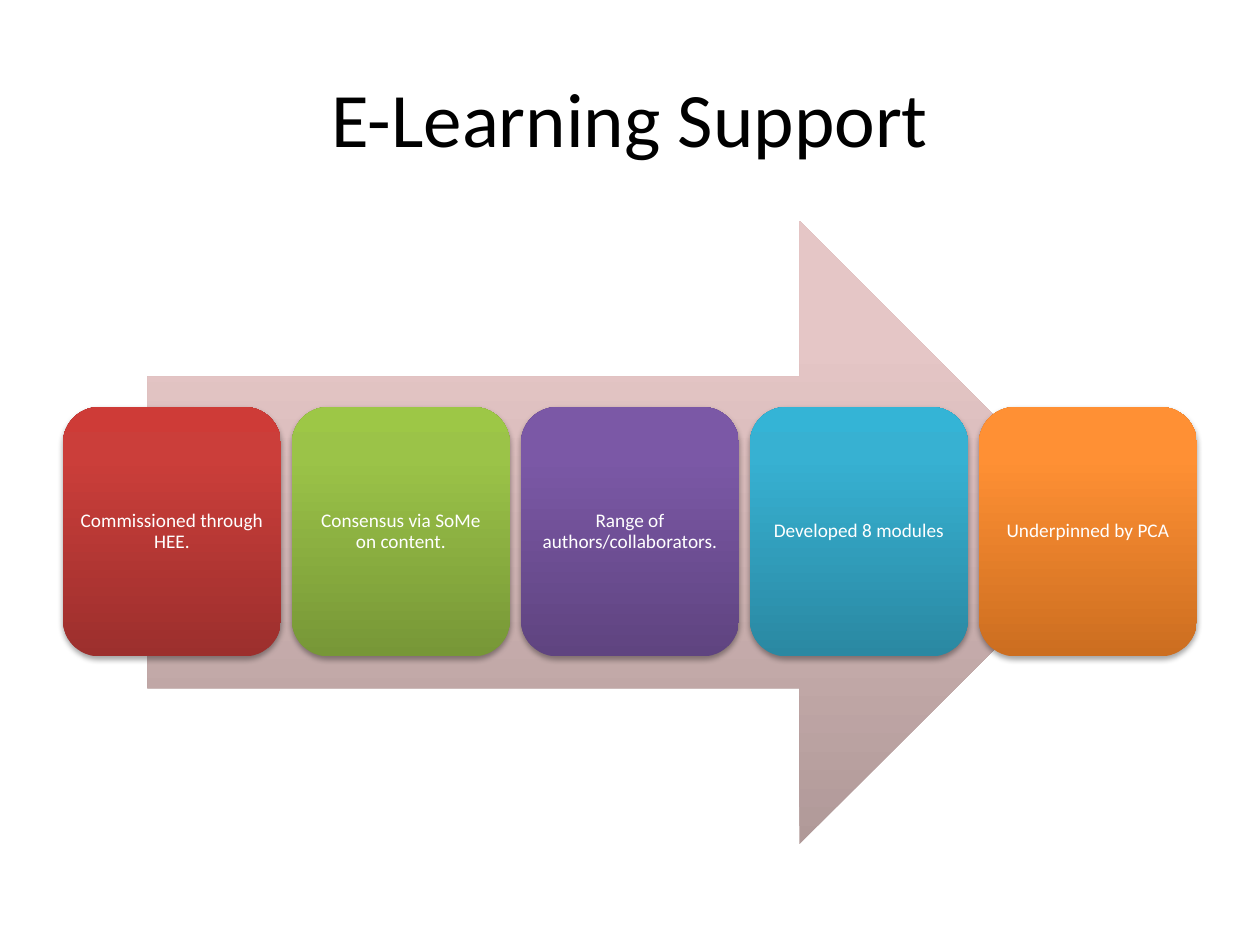
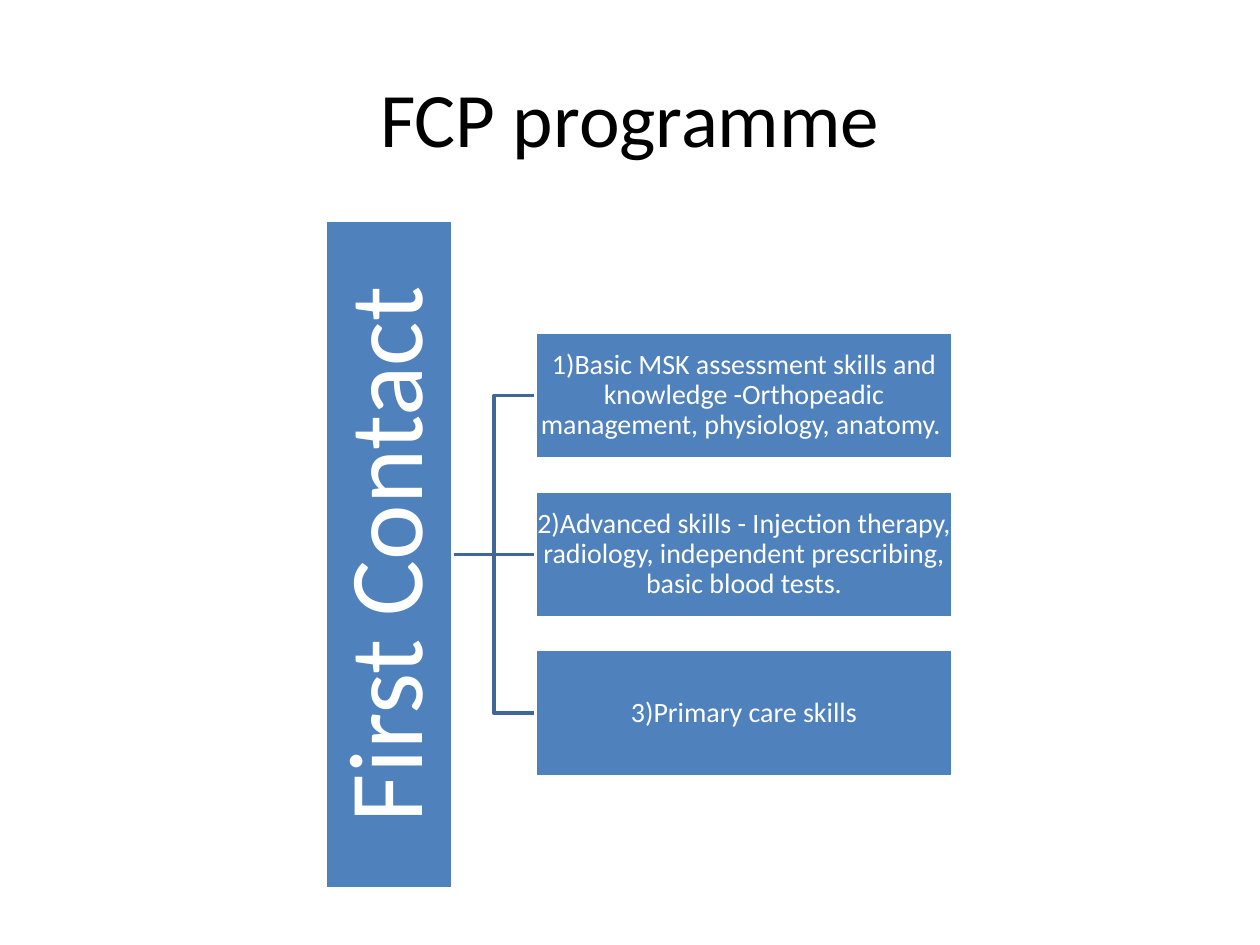
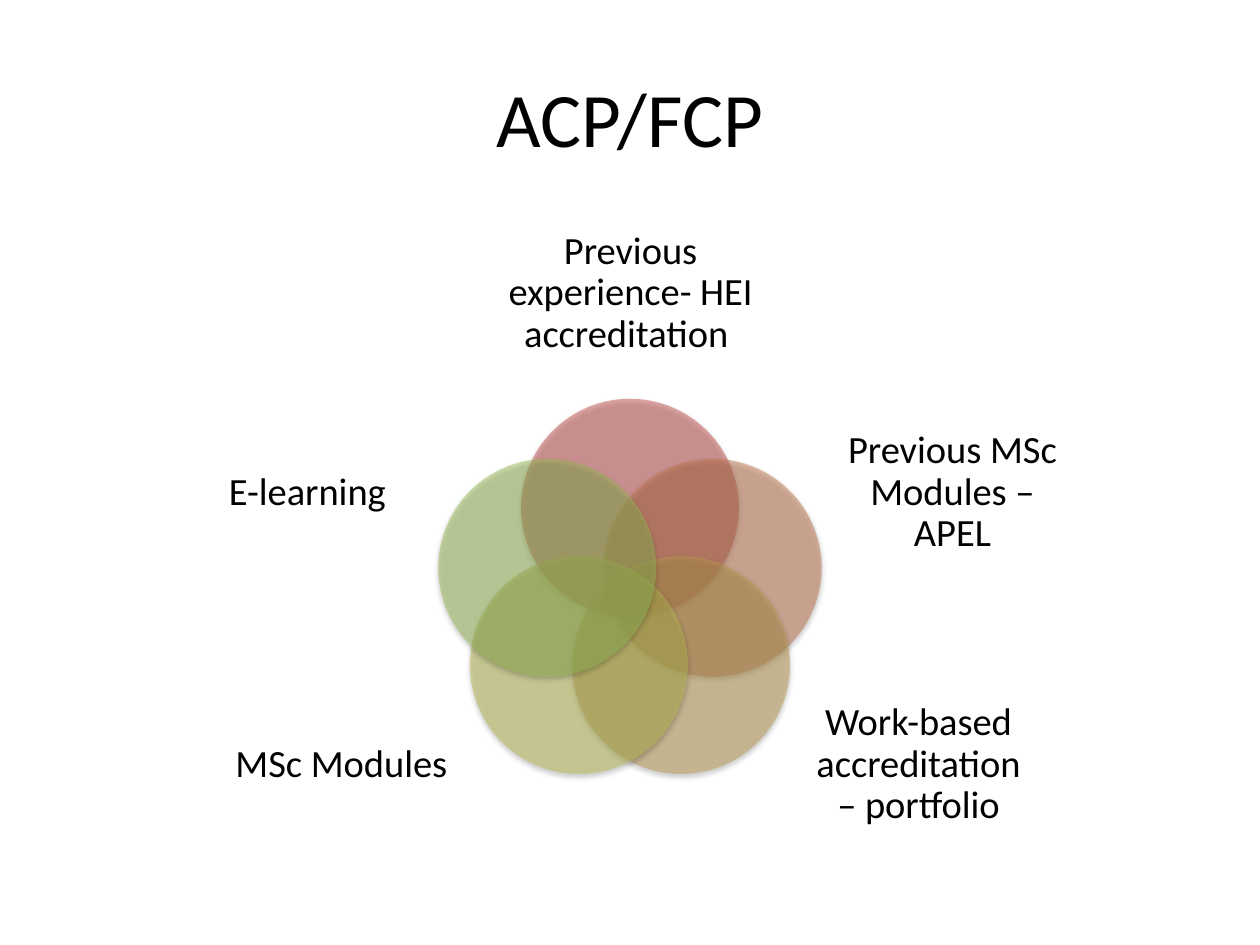
from math import cos, radians, sin

from lxml import etree
from pptx import Presentation
from pptx.dml.color import RGBColor
from pptx.enum.shapes import MSO_CONNECTOR, MSO_SHAPE
from pptx.enum.text import MSO_ANCHOR, PP_ALIGN
from pptx.oxml.ns import qn
from pptx.util import Inches, Pt

ARROW = MSO_SHAPE.RIGHT_ARROW
CARD = MSO_SHAPE.ROUNDED_RECTANGLE
BOX = MSO_SHAPE.RECTANGLE
CIRCLE = MSO_SHAPE.OVAL
STRAIGHT, ELBOW = MSO_CONNECTOR.STRAIGHT, MSO_CONNECTOR.ELBOW
CENTER, MIDDLE = PP_ALIGN.CENTER, MSO_ANCHOR.MIDDLE

FONT = "Calibri"
BLACK, WHITE = "000000", "FFFFFF"
BLUE, LINK_BLUE = "4F81BD", "3F6797"
TITLE_ONLY = 5
RIGHT_SIDE, LEFT_SIDE = 3, 1

ARROW_STOPS = ("B09998", "E5C6C6", "E6C7C6")
STEPS = [
    ("Commissioned through HEE.", ("9C2F2D", "CB3E3A", "CE3B37")),
    ("Consensus via SoMe on content.", ("779737", "9BC348", "9DC746")),
    ("Range of authors/collaborators.", ("5F4480", "7B58A6", "7C57A8")),
    ("Developed 8 modules", ("2A88A2", "37B1D2", "34B4D6")),
    ("Underpinned by PCA", ("CC6E20", "FF9034", "FF9136")),
]
SKILLS = [
    "1)Basic MSK assessment skills and knowledge -Orthopeadic management, "
    "physiology, anatomy. ",
    "2)Advanced skills - Injection therapy, radiology, independent "
    "prescribing, basic blood tests.",
    "3)Primary care skills",
]
# label, circle colour, label box; clockwise from the top
ROUTES = [
    ("Previous experience- HEI accreditation ", "C0504D", (4, 1.75, 2.01, 1.16)),
    ("Previous MSc Modules –APEL", "BF7750", (6.66, 3.28, 1.8, 1.26)),
    ("Work-based accreditation – portfolio", "BD9B53", (6.39, 5.44, 1.8, 1.26)),
    ("MSc Modules", "BCBC56", (1.81, 5.44, 1.8, 1.26)),
    ("E-learning", "9BBB59", (1.54, 3.28, 1.8, 1.26)),
]


def rgb(color):
    return RGBColor.from_string(color)


def set_all(target, values):
    for name, value in values.items():
        setattr(target, name, value)


def add_xml(parent, tag, **attributes):
    return etree.SubElement(parent, qn(tag), attributes)


def add_color(parent, color, opacity=100):
    node = add_xml(parent, "a:srgbClr", val=color)
    if opacity < 100:
        add_xml(node, "a:alpha", val=str(opacity * 1000))


def write(shape, text, size, color, inset=None, spacing=0.9):
    frame = shape.text_frame
    set_all(frame, {"text": text, "word_wrap": True, "vertical_anchor": MIDDLE})
    if inset is not None:
        sides = ("left", "top", "right", "bottom")
        set_all(frame, {f"margin_{side}": Inches(inset) for side in sides})
    paragraph = frame.paragraphs[0]
    set_all(paragraph, {"alignment": CENTER, "line_spacing": spacing})
    set_all(paragraph.font, {"name": FONT, "size": Pt(size)})
    paragraph.font.color.rgb = rgb(color)


def add_titled_slide(deck, title):
    slide = deck.slides.add_slide(deck.slide_layouts[TITLE_ONLY])
    heading = slide.shapes.title
    set_all(heading, {"left": Inches(0.5), "top": Inches(0.3),
                      "width": Inches(9), "height": Inches(1.25)})
    write(heading, title, 44, BLACK, spacing=1.0)
    return slide


def add_plain_shape(slide, kind, box):
    """Add an unfilled shape without line or shadow."""
    shape = slide.shapes.add_shape(kind, *map(Inches, box))
    shape.shadow.inherit = False
    shape.line.fill.background()
    return shape


def fill_gradient(shape, colors):
    """Blend three colours from the bottom edge to the top."""
    shape.fill.gradient()
    shape.fill.gradient_angle = 90
    stops = shape._element.spPr.find(".//" + qn("a:gsLst"))
    for stop in list(stops):
        stops.remove(stop)
    for position, color in zip((0, 80, 100), colors):
        add_color(add_xml(stops, "a:gs", pos=str(position * 1000)), color)


def drop_shadow(shape, distance, opacity):
    effects = shape._element.spPr.find(qn("a:effectLst"))
    shadow = add_xml(effects, "a:outerShdw", blurRad=str(Pt(3.1)),
                     dist=str(Pt(distance)), dir="5400000", rotWithShape="0")
    add_color(shadow, BLACK, opacity)


def add_card(slide, box, text, colors):
    card = add_plain_shape(slide, CARD, box)
    fill_gradient(card, colors)
    drop_shadow(card, 1.8, 35)
    write(card, text, 11, WHITE, inset=0.05)


def add_box(slide, box, text, size, inset):
    shape = add_plain_shape(slide, BOX, box)
    shape.fill.solid()
    shape.fill.fore_color.rgb = rgb(BLUE)
    shape.line.color.rgb = rgb(WHITE)
    shape.line.width = Pt(2)
    write(shape, text, size, WHITE, inset)
    return shape


def add_link(slide, kind, start, end):
    link = slide.shapes.add_connector(kind, *map(Inches, start + end))
    link.line.color.rgb = rgb(LINK_BLUE)
    link.line.width = Pt(2)
    add_xml(link._element.spPr, "a:effectLst")
    return link


def add_circle(slide, box, color):
    circle = add_plain_shape(slide, CIRCLE, box)
    circle.fill.solid()
    circle.fill.fore_color.rgb = rgb(color)
    node = circle._element.spPr.find(qn("a:solidFill"))[0]
    add_xml(node, "a:alpha", val="50000")
    drop_shadow(circle, 1.6, 38)


def build_support(deck):
    slide = add_titled_slide(deck, "E-Learning Support")
    arrow = add_plain_shape(slide, ARROW, (1.17, 1.75, 7.65, 4.95))
    fill_gradient(arrow, ARROW_STOPS)
    width = 1.73
    pitch = (9 - width) / (len(STEPS) - 1)
    for index, (text, colors) in enumerate(STEPS):
        add_card(slide, (0.5 + index * pitch, 3.23, width, 1.98), text, colors)


def build_programme(deck):
    slide = add_titled_slide(deck, "FCP programme")
    trunk_left, branch_left, thickness = 2.58, 4.25, 1.01
    trunk_height, middle, pitch = 5.31, 4.4, 1.26
    centers = [middle + (index - 1) * pitch for index in range(len(SKILLS))]

    # Links come first so that the white box outlines cover their ends.
    links = [add_link(slide, STRAIGHT if center == middle else ELBOW,
                      (trunk_left + thickness, middle), (branch_left, center))
             for center in centers]
    trunk = add_box(slide, (trunk_left, middle - trunk_height / 2, thickness,
                            trunk_height), "First Contact", 60, 0.04)
    trunk.text_frame._txBody.bodyPr.set("vert", "vert270")
    for link, center, skill in zip(links, centers, SKILLS):
        branch = add_box(slide, (branch_left, center - thickness / 2, 3.31,
                                 thickness), skill, 16, 0.01)
        link.begin_connect(trunk, RIGHT_SIDE)
        link.end_connect(branch, LEFT_SIDE)


def build_routes(deck):
    slide = add_titled_slide(deck, "ACP/FCP")
    center_x, center_y, orbit, size = 5, 4.72, 0.69, 1.73
    for index, (text, color, label_box) in enumerate(ROUTES):
        angle = radians(index * 360 / len(ROUTES))
        left = center_x + orbit * sin(angle) - size / 2
        top = center_y - orbit * cos(angle) - size / 2
        add_circle(slide, (left, top, size, size), color)
        label = slide.shapes.add_textbox(*map(Inches, label_box))
        write(label, text, 22, BLACK, inset=0)


def main():
    deck = Presentation()
    set_all(deck, {"slide_width": Inches(10), "slide_height": Inches(7.5)})
    build_support(deck)
    build_programme(deck)
    build_routes(deck)
    deck.save("out.pptx")


if __name__ == "__main__":
    main()
